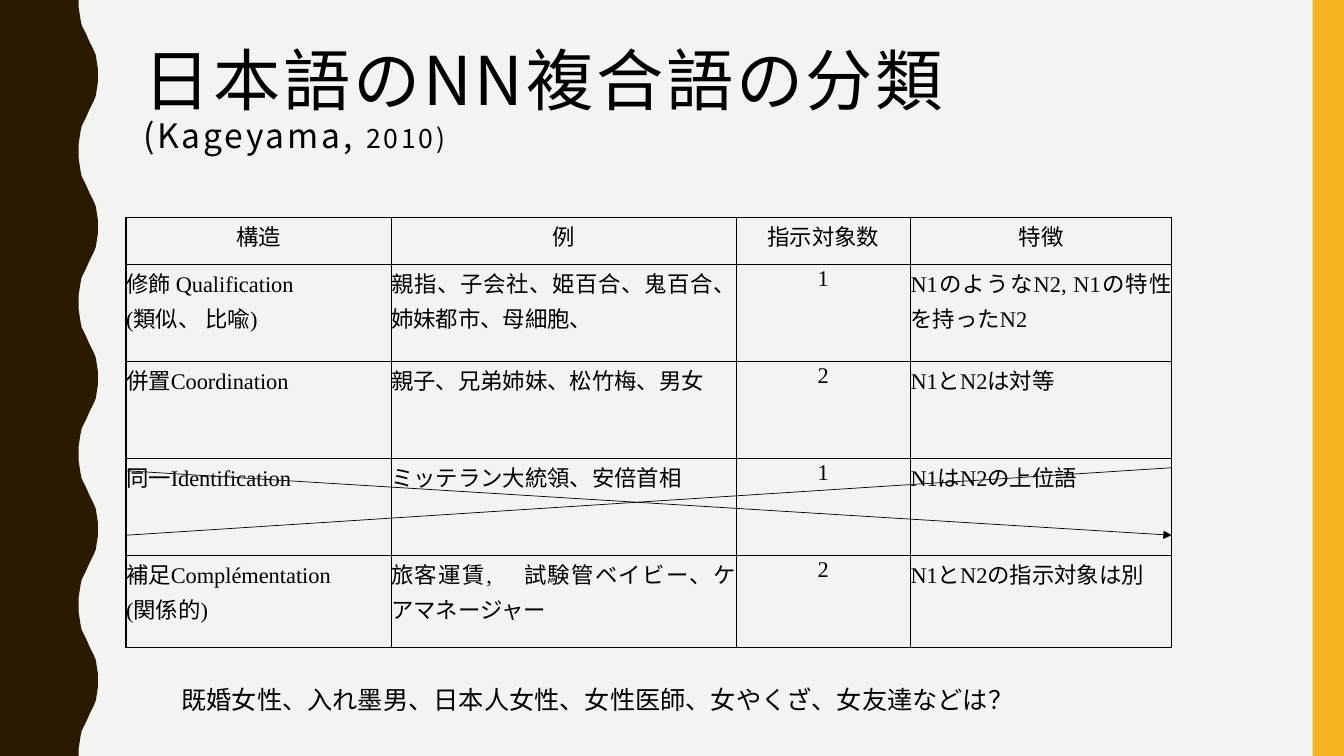
"""Build a slide that sorts Japanese noun-noun compounds in a ruled table."""
import itertools
import pptx
import pptx.util
import pptx.dml.color
import pptx.enum.shapes
import pptx.enum.text
import pptx.oxml
import pptx.oxml.ns

RGBColor = pptx.dml.color.RGBColor
PAPER = RGBColor(0xF3, 0xF3, 0xF2)
BROWN = RGBColor(0x2A, 0x1A, 0x00)
GOLD = RGBColor(0xF8, 0xB3, 0x23)
BLACK = RGBColor(0, 0, 0)
GOTHIC, ROMAN, PLAIN = "Noto Sans CJK JP", "Times New Roman", "Calibri"
ALIGN = pptx.enum.text.PP_ALIGN

WIDTH, HEIGHT = pptx.util.Inches(13.33), pptx.util.Inches(7.5)
LEFT, TOP = 9.38, 28.8
COLS = [19.73, 25.66, 12.98, 19.43]
ROWS = [6.2, 12.83, 12.83, 12.83, 12.17]
CELLS = [
    ["構造", "例", "指示対象数", "特徴"],
    ["修飾 Qualification\n(類似、 比喩)", "親指、子会社、姫百合、鬼百合、姉妹都市、母細胞、",
     "1", "N1のようなN2, N1の特性を持ったN2"],
    ["併置Coordination", "親子、兄弟姉妹、松竹梅、男女", "2", "N1とN2は対等"],
    ["同一Identification", "ミッテラン大統領、安倍首相", "1", "N1はN2の上位語"],
    ["補足Complémentation\n(関係的)", "旅客運賃, 　試験管ベイビー、ケアマネージャー",
     "2", "N1とN2の指示対象は別"],
]
TITLE = [[("日本語のNN複合語の分類", 48)], [("(Kageyama, ", 24), ("2010)", 19)]]
NOTE = "既婚女性、入れ墨男、日本人女性、女性医師、女やくざ、女友達などは？"
CURVE = [(5.85, 0), (5.85, 0.93), (5.93, 1.87), (6, 2.67), (6.08, 3.33),
         (6.23, 3.87), (6.38, 4.4), (6.68, 5.6), (6.83, 6.13), (6.98, 6.67),
         (7.13, 7.33), (7.2, 8.13), (7.28, 9.07), (7.28, 10)]
WAVES, PERIOD = 5, 20


def across(share):
    """Turn a percentage of the slide's width into a length."""
    return round(WIDTH * share / 100)


def down(share):
    """Turn a percentage of the slide's height into a length."""
    return round(HEIGHT * share / 100)


def box(left, top, width, height):
    """Return a frame given in percentages of the slide."""
    return across(left), down(top), across(width), down(height)


def paint(shape, color):
    """Give a shape a flat fill without line or shadow."""
    shape.shadow.inherit = False
    shape.fill.solid()
    shape.fill.fore_color.rgb = color
    shape.line.fill.background()


def add_run(para, text, font):
    """Add a run with its Latin font and the East Asian font."""
    run = para.add_run()
    run.text, run.font.name = text, font
    east = pptx.oxml.ns.qn("a:ea")
    run.font._element.makeelement(east)
    props = run._r.get_or_add_rPr()
    props.append(props.makeelement(east, {"typeface": GOTHIC}))
    return run


def add_wave(slide):
    """Draw the brown edge from one curve, mirrored and repeated."""
    wave = CURVE + [(x, PERIOD - y) for x, y in reversed(CURVE[:-1])]
    edge = [(across(x), down(y + PERIOD * turn))
            for turn in range(WAVES) for x, y in wave]
    pen = slide.shapes.build_freeform(0, 0)
    pen.add_line_segments(edge + [(0, HEIGHT)], close=True)
    paint(pen.convert_to_shape(), BROWN)


def add_bar(slide):
    """Draw the gold bar at the right."""
    kind = pptx.enum.shapes.MSO_SHAPE.RECTANGLE
    paint(slide.shapes.add_shape(kind, *box(97.67, 0, 2.33, 100)), GOLD)


def add_text(slide, *place):
    """Add a wrapping text box and return its first paragraph."""
    frame = slide.shapes.add_textbox(*box(*place)).text_frame
    frame.word_wrap = True
    inset = pptx.util.Inches(0.05)
    frame.margin_left = frame.margin_right = inset
    frame.margin_top = frame.margin_bottom = inset
    para = frame.paragraphs[0]
    para.font.color.rgb = BLACK
    return para


def add_title(slide):
    """Write the spaced title and its source."""
    para = add_text(slide, 10.28, 5.6, 83.5, 21.73)
    para.line_spacing = 0.9
    for row, line in enumerate(TITLE):
        if row:
            para.add_line_break()
        for text, size in line:
            run = add_run(para, text, GOTHIC)
            run.font.size = pptx.util.Pt(size)
            run._r.get_or_add_rPr().set("spc", "200")


def add_note(slide):
    """Write the question below the table."""
    para = add_text(slide, 13.13, 89.87, 70.52, 5.33)
    para.font.size = pptx.util.Pt(18)
    add_run(para, NOTE, PLAIN)


def rule(cell):
    """Draw black borders round a cell."""
    props = cell._tc.get_or_add_tcPr()
    for place, side in enumerate("LRTB"):
        props.insert(place, pptx.oxml.parse_xml(
            f'<a:ln{side} {pptx.oxml.ns.nsdecls("a")} w="12700"><a:solidFill>'
            f'<a:srgbClr val="{BLACK}"/></a:solidFill></a:ln{side}>'))


def fill_cell(cell, text, align):
    """Write a cell, with Latin and Japanese runs set apart."""
    cell.margin_left = cell.margin_right = 0
    cell.margin_top = cell.margin_bottom = 0
    cell.fill.background()
    rule(cell)
    frame = cell.text_frame
    for row, line in enumerate(text.split("\n")):
        para = frame.add_paragraph() if row else frame.paragraphs[0]
        para.alignment, para.line_spacing = align, 1.07
        para.font.size = pptx.util.Pt(16)
        para.font.color.rgb = BLACK
        for latin, part in itertools.groupby(line, lambda sign: sign < "\u0250"):
            add_run(para, "".join(part), ROMAN if latin else GOTHIC)


def add_grid(slide):
    """Add the table of compound types."""
    place = box(LEFT, TOP, sum(COLS), sum(ROWS))
    table = slide.shapes.add_table(len(ROWS), len(COLS), *place).table
    table.first_row = table.horz_banding = False
    for col, share in zip(table.columns, COLS):
        col.width = across(share)
    for row, share in zip(table.rows, ROWS):
        row.height = down(share)
    for row, texts in enumerate(CELLS):
        for col, text in enumerate(texts):
            mid = row == 0 or col == 2
            fill_cell(table.cell(row, col), text,
                      ALIGN.CENTER if mid else ALIGN.JUSTIFY)


def add_strike(slide, start, end, arrow=False):
    """Draw a thin line across the table."""
    kind = pptx.enum.shapes.MSO_CONNECTOR.STRAIGHT
    line = slide.shapes.add_connector(
        kind, across(LEFT), down(start), across(LEFT + sum(COLS)), down(end))
    line.line.color.rgb = BLACK
    line.line.width = pptx.util.Pt(0.5)
    props = line._element.spPr
    props.append(props.makeelement(pptx.oxml.ns.qn("a:effectLst")))
    if arrow:
        stroke = line.line._get_or_add_ln()
        stroke.append(stroke.makeelement(
            pptx.oxml.ns.qn("a:tailEnd"), {"type": "triangle"}))


def main():
    """Build and save the slide."""
    deck = pptx.Presentation()
    deck.slide_width, deck.slide_height = WIDTH, HEIGHT
    slide = deck.slides.add_slide(deck.slide_layouts[6])
    slide.background.fill.solid()
    slide.background.fill.fore_color.rgb = PAPER
    add_wave(slide)
    add_bar(slide)
    add_title(slide)
    add_grid(slide)
    add_strike(slide, 62.27, 70.8, arrow=True)
    add_strike(slide, 70.8, 61.87)
    add_note(slide)
    deck.save("out.pptx")


if __name__ == "__main__":
    main()
